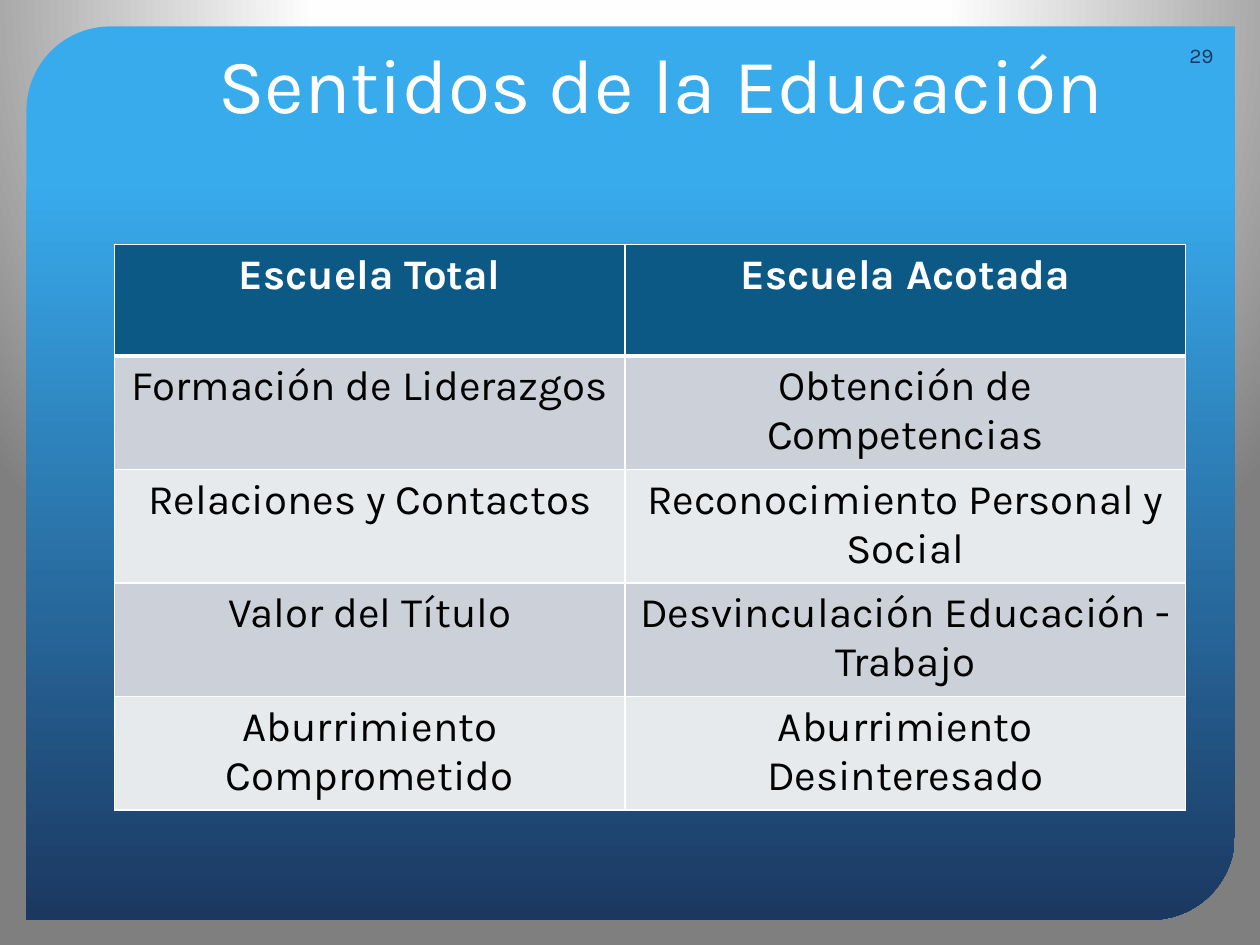
from lxml import etree
from pptx import Presentation
from pptx.dml.color import RGBColor
from pptx.enum.shapes import MSO_SHAPE
from pptx.enum.text import MSO_ANCHOR, MSO_AUTO_SIZE, PP_ALIGN
from pptx.oxml import parse_xml
from pptx.oxml.ns import nsdecls, qn
from pptx.util import Inches, Pt

WHITE = RGBColor(0xFF, 0xFF, 0xFF)
NEAR_WHITE = RGBColor(0xFE, 0xFE, 0xFE)
GREY = RGBColor(0x7F, 0x7F, 0x7F)
BLACK = RGBColor(0x00, 0x00, 0x00)
SKY = RGBColor(0x38, 0xAB, 0xED)
NAVY = RGBColor(0x1B, 0x38, 0x61)
HEADER = RGBColor(0x0C, 0x59, 0x86)
BANDS = [RGBColor(0xCC, 0xD1, 0xD9), RGBColor(0xE7, 0xEA, 0xED)]

FONT = "Karla"
TITLE_FONT = {"size": Pt(44), "bold": False}
NUMBER_FONT = {"size": Pt(12), "bold": False}
HEADER_FONT = {"size": Pt(24), "bold": True}
BODY_FONT = {"size": Pt(24), "bold": False}

ROWS = [
    ("Escuela Total", "Escuela Acotada"),
    ("Formación de Liderazgos", "Obtención de Competencias"),
    ("Relaciones y Contactos", "Reconocimiento Personal y Social"),
    ("Valor del Título", "Desvinculación Educación - Trabajo"),
    ("Aburrimiento Comprometido", "Aburrimiento Desinteresado"),
]
COL_WIDTHS = [4.05, 4.45]


def set_text(tf, text, fmt, color, align):
    p = tf.paragraphs[0]
    p.alignment = align
    r = p.add_run()
    r.text = text
    r.font.name = FONT
    r.font.color.rgb = color
    for name, value in fmt.items():
        setattr(r.font, name, value)


def set_gradient(fill, parent, stops, direction):
    """Fill with (percent, colour) stops; direction is the XML of the gradient's course."""
    fill.gradient()
    old = next(parent.iter(qn("a:gradFill")))
    gs = "".join(
        f'<a:gs pos="{pos * 1000}"><a:srgbClr val="{color}"/></a:gs>'
        for pos, color in stops
    )
    new = parse_xml(
        f'<a:gradFill {nsdecls("a")} rotWithShape="1">'
        f"<a:gsLst>{gs}</a:gsLst>{direction}</a:gradFill>"
    )
    old.getparent().replace(old, new)


def set_borders(cell, widths):
    tc_pr = cell._tc.get_or_add_tcPr()
    for i, (side, width) in enumerate(widths.items()):
        ln = parse_xml(f'<a:{side} {nsdecls("a")} w="{Pt(width)}"/>')
        fill = etree.SubElement(ln, qn("a:solidFill"))
        etree.SubElement(fill, qn("a:srgbClr"), val=str(WHITE))
        tc_pr.insert(i, ln)


def add_backdrop(slide, x, y, w, h):
    # Light from above on the page
    set_gradient(
        slide.background.fill, slide.element,
        [(0, WHITE), (40, NEAR_WHITE), (100, GREY)],
        '<a:path path="circle">'
        '<a:fillToRect l="50000" t="-80000" r="50000" b="180000"/></a:path>',
    )
    # Blue panel with two rounded corners
    sp = slide.shapes.add_shape(
        MSO_SHAPE.ROUND_2_DIAG_RECTANGLE, Inches(x), Inches(y), Inches(w), Inches(h)
    )
    sp.adjustments[0] = 0.094
    sp.adjustments[1] = 0
    sp.shadow.inherit = False
    sp.line.fill.background()
    set_gradient(
        sp.fill, sp.element, [(17, SKY), (100, NAVY)],
        '<a:lin ang="5400000" scaled="0"/>',
    )
    # Panel goes behind the title
    slide.shapes.element.insert(2, sp.element)


def add_title(slide, x, y, w, h):
    title = slide.shapes.title
    title.left, title.top = Inches(x), Inches(y)
    title.width, title.height = Inches(w), Inches(h)
    tf = title.text_frame
    tf.auto_size = MSO_AUTO_SIZE.NONE
    tf.vertical_anchor = MSO_ANCHOR.BOTTOM
    set_text(tf, "Sentidos de la Educación", TITLE_FONT, WHITE, PP_ALIGN.CENTER)


def add_page_number(slide, x, y, w, h):
    box = slide.shapes.add_textbox(Inches(x), Inches(y), Inches(w), Inches(h))
    tf = box.text_frame
    tf.word_wrap = True
    tf.vertical_anchor = MSO_ANCHOR.MIDDLE
    set_text(tf, "29", NUMBER_FONT, NAVY, PP_ALIGN.RIGHT)


def add_comparison(slide, x, y, w, h):
    table = slide.shapes.add_table(
        len(ROWS), len(COL_WIDTHS), Inches(x), Inches(y), Inches(w), Inches(h)
    ).table
    for col, width in zip(table.columns, COL_WIDTHS):
        col.width = Inches(width)
    for i, texts in enumerate(ROWS):
        is_header = i == 0
        fmt, color = (HEADER_FONT, WHITE) if is_header else (BODY_FONT, BLACK)
        top = 3 if i == 1 else 1
        bottom = 3 if is_header else 1
        for j, text in enumerate(texts):
            cell = table.cell(i, j)
            cell.fill.solid()
            cell.fill.fore_color.rgb = HEADER if is_header else BANDS[(i - 1) % 2]
            set_borders(cell, {"lnL": 1, "lnR": 1, "lnT": top, "lnB": bottom})
            set_text(cell.text_frame, text, fmt, color, PP_ALIGN.CENTER)


def main():
    prs = Presentation()
    prs.slide_width, prs.slide_height = Inches(10), Inches(7.5)
    slide = prs.slides.add_slide(prs.slide_layouts[5])
    add_backdrop(slide, 0.21, 0.21, 9.59, 7.09)
    add_title(slide, 1, 0.3, 8.5, 0.77)
    add_page_number(slide, 9.19, 0.24, 0.54, 0.4)
    add_comparison(slide, 0.91, 1.94, 8.5, 4.43)
    prs.save("out.pptx")


if __name__ == "__main__":
    main()
